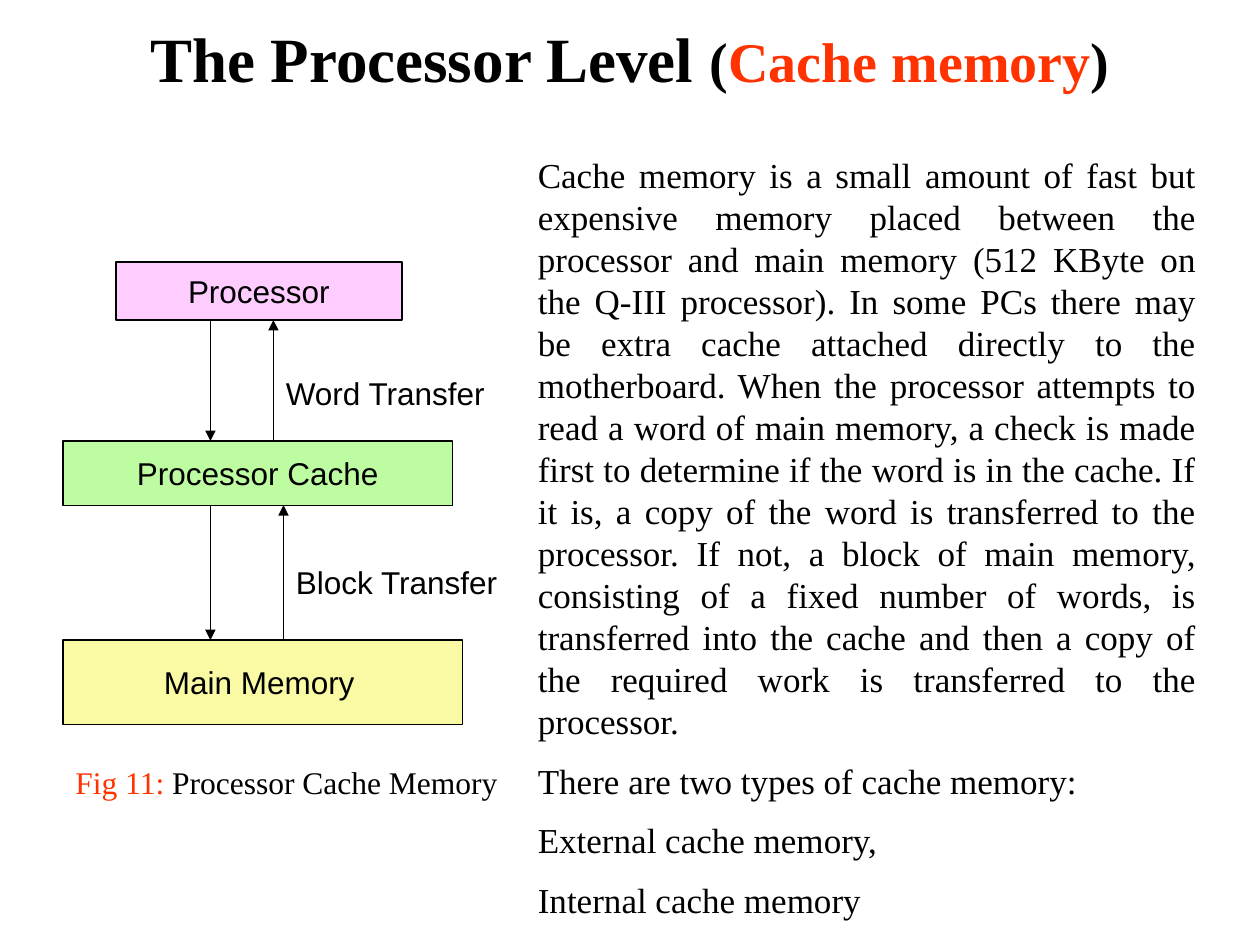
from dataclasses import dataclass

from lxml import etree
from pptx import Presentation
from pptx.dml.color import RGBColor
from pptx.enum.shapes import MSO_CONNECTOR as Connector, MSO_SHAPE as Shape
from pptx.enum.text import MSO_ANCHOR as Anchor, PP_ALIGN as Align
from pptx.oxml.ns import qn
from pptx.util import Inches, Pt

COLORS = {
    "ink": "000000",
    "accent": "FF3300",
    "processor": "FFCCFF",
    "cache": "BEFCA2",
    "memory": "FAFAA4",
}
SERIF, SANS = "Times New Roman", "Arial"


@dataclass
class Run:
    text: str
    size: float
    font: str = SERIF
    color: str = "ink"
    bold: bool = False


@dataclass
class Level:
    runs: list[Run]
    color: str
    left: float
    top: float
    width: float
    height: float

    @property
    def bottom(self) -> float:
        return self.top + self.height


def rgb(name: str) -> RGBColor:
    return RGBColor.from_string(COLORS[name])


def add_runs(paragraph, runs: list[Run]) -> None:
    for item in runs:
        run = paragraph.add_run()
        run.text = item.text
        run.font.size = Pt(item.size)
        run.font.name = item.font
        run.font.bold = item.bold
        run.font.color.rgb = rgb(item.color)


def add_text(slide, left: float, top: float, width: float, height: float,
             paragraphs: list[list[Run]], align=Align.LEFT,
             anchor=Anchor.TOP, wrap: bool = True):
    frame = slide.shapes.add_textbox(
        Inches(left), Inches(top), Inches(width), Inches(height)).text_frame
    frame.word_wrap = wrap
    frame.vertical_anchor = anchor
    for index, runs in enumerate(paragraphs):
        paragraph = frame.add_paragraph() if index else frame.paragraphs[0]
        paragraph.alignment = align
        add_runs(paragraph, runs)
    return frame


def add_level(slide, level: Level) -> None:
    box = slide.shapes.add_shape(
        Shape.RECTANGLE, Inches(level.left), Inches(level.top),
        Inches(level.width), Inches(level.height))
    box.shadow.inherit = False
    box.fill.solid()
    box.fill.fore_color.rgb = rgb(level.color)
    box.line.color.rgb = rgb("ink")
    box.line.width = Pt(0.75)
    frame = box.text_frame
    frame.word_wrap = False
    frame.vertical_anchor = Anchor.MIDDLE
    frame.paragraphs[0].alignment = Align.CENTER
    add_runs(frame.paragraphs[0], level.runs)


def add_arrow(slide, x: float, start: float, end: float) -> None:
    arrow = slide.shapes.add_connector(
        Connector.STRAIGHT, Inches(x), Inches(start), Inches(x), Inches(end))
    arrow.line.color.rgb = rgb("ink")
    arrow.line.width = Pt(0.75)
    etree.SubElement(arrow.line._get_or_add_ln(), qn("a:tailEnd"), type="triangle")
    etree.SubElement(arrow._element.spPr, qn("a:effectLst"))


def add_transfer(slide, upper: Level, lower: Level, up_x: float) -> None:
    """Draw the arrow down and the arrow up between two levels."""
    add_arrow(slide, 1.67, upper.bottom, lower.top)
    add_arrow(slide, up_x, lower.top, upper.bottom)


PROCESSOR = Level([Run("Processor", 18, SANS)], "processor", 0.92, 2.08, 2.27, 0.46)
CACHE = Level([Run("Processor Cache", 18, SANS)], "cache", 0.5, 3.5, 3.09, 0.51)
MEMORY = Level([Run("Main Memory", 18, SANS), Run(" ", 14, SANS)],
               "memory", 0.5, 5.08, 3.17, 0.67)

EXPLANATION = [
    "Cache memory is a small amount of fast but expensive memory placed between "
    "the processor and main memory (512 KByte on the Q-III processor). In some PCs "
    "there may be extra cache attached directly to the motherboard. When the "
    "processor attempts to read a word of main memory, a check is made first to "
    "determine if the word is in the cache. If it is, a copy of the word is "
    "transferred to the processor. If not, a block of main memory, consisting of a "
    "fixed number of words, is transferred into the cache and then a copy of the "
    "required work is transferred to the processor.",
    "There are two types of cache memory:",
    "External cache memory,",
    "Internal cache memory",
]


def main() -> None:
    prs = Presentation()
    prs.slide_width, prs.slide_height = Inches(10), Inches(7.5)
    slide = prs.slides.add_slide(prs.slide_layouts[6])

    # Title
    add_text(slide, 0.75, 0.08, 8.5, 0.75, [[
        Run("The Processor Level ", 36, bold=True),
        Run("(", 32, bold=True),
        Run("Cache memory", 32, color="accent", bold=True),
        Run(")", 32, bold=True),
    ]], Align.CENTER, Anchor.MIDDLE)

    # Memory levels and the transfers between them
    for level in (MEMORY, CACHE, PROCESSOR):
        add_level(slide, level)
    add_transfer(slide, PROCESSOR, CACHE, 2.17)
    add_transfer(slide, CACHE, MEMORY, 2.25)
    add_text(slide, 2.17, 2.92, 2.27, 0.4, [[Run("Word Transfer", 18, SANS)]])
    add_text(slide, 2.25, 4.42, 2.52, 0.4, [[Run("Block Transfer", 18, SANS)]])

    # Explanation
    explanation = add_text(slide, 4.17, 1.17, 5.42, 6.33,
                           [[Run(text, 20)] for text in EXPLANATION], Align.JUSTIFY)
    for paragraph in explanation.paragraphs:
        paragraph.line_spacing = Pt(24)
    for paragraph in explanation.paragraphs[1:]:
        paragraph.space_before = Pt(10)

    # Caption
    add_text(slide, 0.5, 6.01, 3.59, 0.4, [[
        Run("Fig 11: ", 18, color="accent"),
        Run("Processor Cache Memory", 18),
    ]], wrap=False)

    prs.save("out.pptx")


if __name__ == "__main__":
    main()
